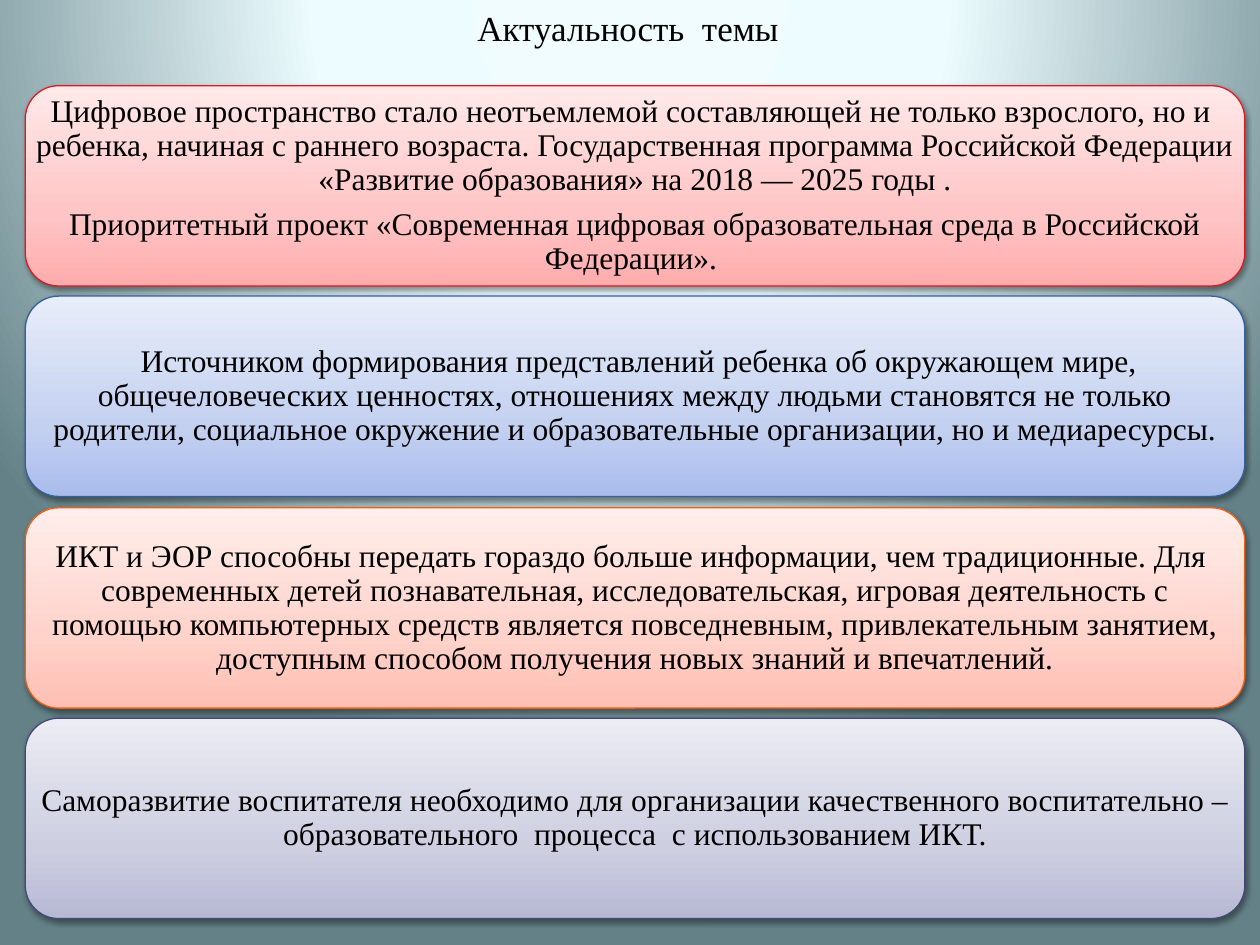
import pptx
import pptx.dml.color
import pptx.enum.shapes
import pptx.enum.text
import pptx.oxml
import pptx.oxml.ns
import pptx.util

Inches = pptx.util.Inches
Pt = pptx.util.Pt
RGBColor = pptx.dml.color.RGBColor
qn = pptx.oxml.ns.qn

BLACK = RGBColor(0x00, 0x00, 0x00)
SKY_CENTER = RGBColor(0xF1, 0xFC, 0xFF)
SKY_MIDDLE = RGBColor(0xEC, 0xFC, 0xFF)
SKY_EDGE = RGBColor(0x63, 0x81, 0x87)
RED_LINE = RGBColor(0xDA, 0x1A, 0x23)
RED_FILL = (RGBColor(0xFF, 0xAC, 0xAD), RGBColor(0xFF, 0xC4, 0xC5), RGBColor(0xFF, 0xE9, 0xE9))
BLUE_LINE = RGBColor(0x35, 0x60, 0x9C)
BLUE_FILL = (RGBColor(0xA9, 0xBC, 0xEC), RGBColor(0xC3, 0xD0, 0xF0), RGBColor(0xE8, 0xED, 0xFA))
ORANGE_LINE = RGBColor(0xEB, 0x60, 0x15)
ORANGE_FILL = (RGBColor(0xFF, 0xBF, 0xB3), RGBColor(0xFF, 0xD2, 0xCA), RGBColor(0xFF, 0xEE, 0xEB))
VIOLET_LINE = RGBColor(0x44, 0x48, 0x77)
VIOLET_FILL = (RGBColor(0xB7, 0xB9, 0xD4), RGBColor(0xCD, 0xCE, 0xE0), RGBColor(0xEC, 0xEC, 0xF4))

UPWARD = '<a:lin ang="16200000" scaled="0"/>'
RADIAL = '<a:path path="circle"><a:fillToRect l="50000" t="-80000" r="50000" b="180000"/></a:path>'
CARD_SHADOW = (
    '<a:outerShdw {ns} blurRad="40000" dist="20000" dir="5400000" rotWithShape="0">'
    '<a:srgbClr val="000000"><a:alpha val="38000"/></a:srgbClr></a:outerShdw>'
)

CARDS = [
    (RED_LINE, RED_FILL, [
        "Цифровое пространство стало неотъемлемой составляющей не только взрослого, но и  ребенка, "
        "начиная с раннего возраста. Государственная программа Российской Федерации "
        "«Развитие образования» на 2018 — 2025 годы .",
        "Приоритетный проект «Современная цифровая образовательная среда в Российской Федерации». ",
    ]),
    (BLUE_LINE, BLUE_FILL, [
        " Источником формирования представлений ребенка об окружающем мире, общечеловеческих "
        "ценностях, отношениях между людьми становятся не только родители, социальное окружение "
        "и образовательные организации, но и медиаресурсы.",
    ]),
    (ORANGE_LINE, ORANGE_FILL, [
        "ИКТ и ЭОР способны передать гораздо больше информации, чем традиционные. Для  "
        "современных детей познавательная, исследовательская, игровая деятельность с помощью "
        "компьютерных средств является повседневным, привлекательным занятием, доступным "
        "способом получения новых знаний и впечатлений.",
    ]),
    (VIOLET_LINE, VIOLET_FILL, [
        "Саморазвитие воспитателя необходимо для организации качественного воспитательно – "
        "образовательного  процесса  с использованием ИКТ.",
    ]),
]


def write_text(frame, texts, size=18, font="Times New Roman", color=BLACK, spacing=1.0, after=0):
    """Fill a text frame with centred paragraphs."""
    for index, text in enumerate(texts):
        para = frame.paragraphs[0] if index == 0 else frame.add_paragraph()
        para.alignment = pptx.enum.text.PP_ALIGN.CENTER
        para.line_spacing = spacing
        para.space_before = Pt(0)
        para.space_after = Pt(after)
        span = para.add_run()
        span.text = text
        span.font.size = Pt(size)
        span.font.name = font
        span.font.color.rgb = color


class SlideBuilder:
    """Holds the slide style and the current slide."""

    namespace = pptx.oxml.ns.nsdecls("a")
    line_width = Pt(0.75)

    def __init__(self, deck):
        self.page = deck.slides.add_slide(deck.slide_layouts[5])

    def gradient(self, fill, owner, colors, positions, direction):
        fill.gradient()
        stops = "".join(
            f'<a:gs pos="{position * 1000}"><a:srgbClr val="{color}"/></a:gs>'
            for position, color in zip(positions, colors)
        )
        old = owner.find(".//" + qn("a:gradFill"))
        new = pptx.oxml.parse_xml(
            f'<a:gradFill {self.namespace} rotWithShape="1">'
            f"<a:gsLst>{stops}</a:gsLst>{direction}</a:gradFill>"
        )
        old.getparent().replace(old, new)

    def background(self, colors):
        self.gradient(self.page.background.fill, self.page.element, colors, (0, 40, 100), RADIAL)

    def title(self, text, left, top, width, height):
        box = self.page.shapes.title
        box.left, box.top, box.width, box.height = map(Inches, (left, top, width, height))
        frame = box.text_frame
        frame.word_wrap = True
        frame.auto_size = pptx.enum.text.MSO_AUTO_SIZE.SHAPE_TO_FIT_TEXT
        frame.vertical_anchor = pptx.enum.text.MSO_ANCHOR.TOP
        write_text(frame, [text], size=20)

    def card(self, texts, left, top, width, height, line, colors):
        box = self.page.shapes.add_shape(
            pptx.enum.shapes.MSO_SHAPE.ROUNDED_RECTANGLE,
            Inches(left), Inches(top), Inches(width), Inches(height),
        )
        self.gradient(box.fill, box.element, colors, (0, 35, 100), UPWARD)
        box.line.color.rgb = line
        box.line.width = self.line_width
        box.shadow.inherit = False
        effects = box.element.find(".//" + qn("a:effectLst"))
        effects.append(pptx.oxml.parse_xml(CARD_SHADOW.format(ns=self.namespace)))
        frame = box.text_frame
        frame.word_wrap = True
        frame.vertical_anchor = pptx.enum.text.MSO_ANCHOR.MIDDLE
        frame.margin_left = frame.margin_right = frame.margin_top = frame.margin_bottom = 0
        write_text(frame, texts, spacing=0.9, after=6.3)


def main():
    """Build the slide and save the deck."""
    deck = pptx.Presentation()
    deck.slide_width, deck.slide_height = Inches(10), Inches(7.5)
    builder = SlideBuilder(deck)
    builder.background((SKY_CENTER, SKY_MIDDLE, SKY_EDGE))
    first_top, step = 0.68, 1.673
    for index, (line, colors, texts) in enumerate(CARDS):
        builder.card(texts, 0.2, round(first_top + index * step, 2), 9.68, 1.59, line, colors)
    builder.title("Актуальность  темы ", 3.58, 0, 2.88, 0.44)
    deck.save("out.pptx")


if __name__ == "__main__":
    main()
